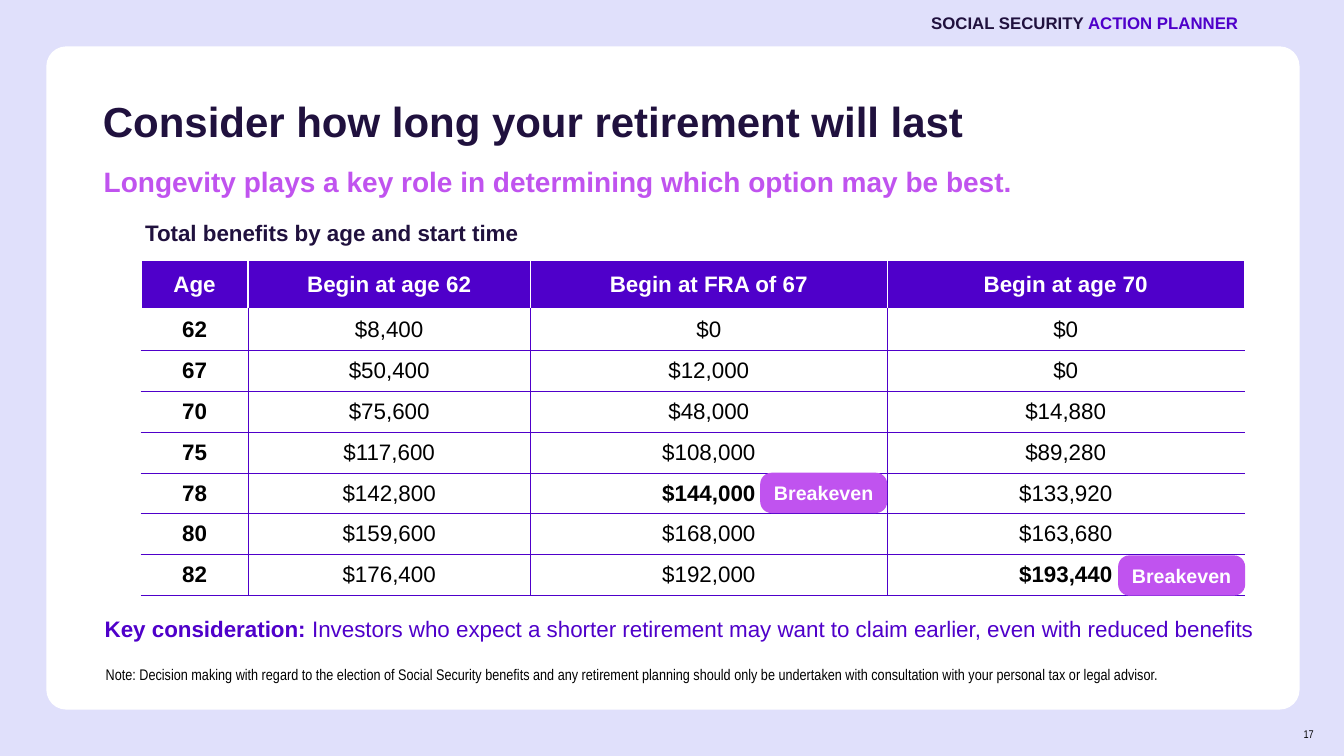
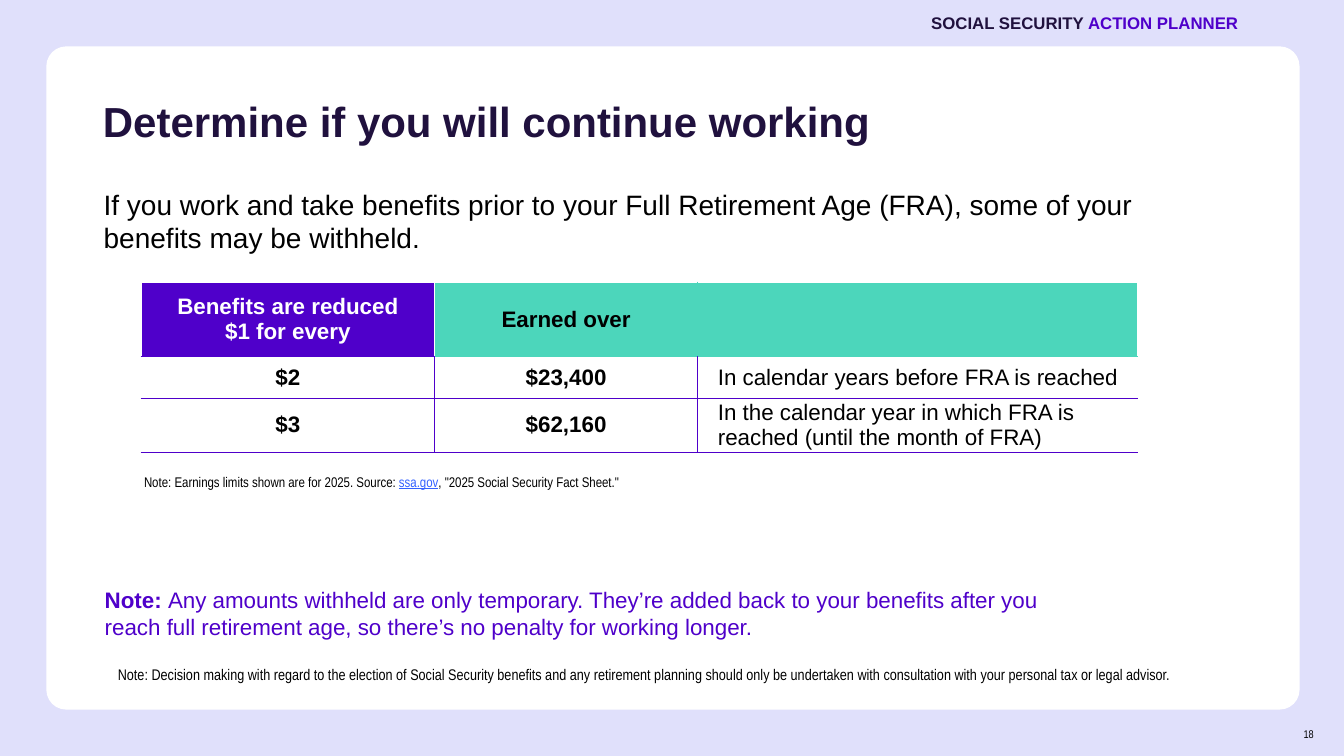
import pptx
import pptx.dml.color
import pptx.enum.shapes
import pptx.enum.text
import pptx.oxml
import pptx.oxml.ns
import pptx.util

Inches = pptx.util.Inches
Pt = pptx.util.Pt
RGBColor = pptx.dml.color.RGBColor
ALIGN = pptx.enum.text.PP_ALIGN
ANCHOR = pptx.enum.text.MSO_ANCHOR
ROUNDED = pptx.enum.shapes.MSO_SHAPE.ROUNDED_RECTANGLE

LAVENDER = RGBColor(0xE0, 0xE0, 0xFB)
WHITE = RGBColor(0xFF, 0xFF, 0xFF)
BLACK = RGBColor(0, 0, 0)
NAVY = RGBColor(0x20, 0x11, 0x3E)
PURPLE = RGBColor(0x4F, 0x00, 0xCA)
ORCHID = RGBColor(0xC0, 0x53, 0xEF)
TEAL = RGBColor(0x4C, 0xD6, 0xBB)
LINK_BLUE = RGBColor(0x34, 0x61, 0xFF)


def write(frame, runs, size, align=ALIGN.LEFT, anchor=ANCHOR.TOP, font="Arial"):
    """Fill a text frame or cell with (text, colour, font settings) runs; \\n breaks a line."""
    frame.word_wrap = True
    frame.vertical_anchor = anchor
    paragraph = frame.paragraphs[0]
    paragraph.alignment = align
    for text, colour, settings in runs:
        for number, line in enumerate(text.split("\n")):
            if number:
                paragraph.add_line_break()
            run = paragraph.add_run()
            run.text = line
            run.font.name = font
            run.font.size = Pt(size)
            run.font.color.rgb = colour
            for name, value in settings.items():
                setattr(run.font, name, value)
    return paragraph


def add_benefit_table(slide, box, widths, header_height, header, body, bold_columns, base_width):
    """Header entries are (text, fill, text colour, base line colour, right line colour)."""
    left, top, width, height = (Inches(value) for value in box)
    grid = slide.shapes.add_table(len(body) + 1, len(widths), left, top, width, height).table
    for column, column_width in zip(grid.columns, widths):
        column.width = Inches(column_width)
    body_height = Inches((box[3] - header_height) / len(body))
    for number, row in enumerate(grid.rows):
        row.height = body_height if number else Inches(header_height)

    last = len(widths) - 1
    for r, texts in enumerate([[entry[0] for entry in header]] + body):
        for c, text in enumerate(texts):
            cell = grid.cell(r, c)
            _, fill, text_colour, base_colour, right_colour = header[c]
            base = (base_colour, base_width)
            purple_line, white_line = (PURPLE, 0.5), (WHITE, 1)
            if r == 0:
                lines = {
                    "lnL": (header[c - 1][4] if c else WHITE, 1),
                    "lnR": (right_colour, 1),
                    "lnT": white_line,
                    "lnB": base,
                }
            else:
                fill, text_colour = WHITE, BLACK
                lines = {
                    "lnL": purple_line if c else white_line,
                    "lnR": purple_line if c < last else white_line,
                    "lnT": base if r == 1 else purple_line,
                    "lnB": purple_line,
                }
                cell.margin_top = cell.margin_bottom = 0
            cell.fill.solid()
            cell.fill.fore_color.rgb = fill
            for position, (tag, (colour, points)) in enumerate(lines.items()):
                line = pptx.oxml.parse_xml(
                    f'<a:{tag} {pptx.oxml.ns.nsdecls("a")} w="{Pt(points)}">'
                    f'<a:solidFill><a:srgbClr val="{colour}"/></a:solidFill></a:{tag}>'
                )
                cell._tc.get_or_add_tcPr().insert(position, line)
            sentence = r > 0 and not text.startswith("$") and c > 0
            if sentence:
                cell.margin_left = Inches(0.2)
            bold = r == 0 or c in bold_columns or text in BREAKEVEN_AMOUNTS
            cell.vertical_anchor = ANCHOR.MIDDLE
            if text:
                write(cell.text_frame, [(text, text_colour, {"bold": bold})], 16,
                      ALIGN.LEFT if sentence else ALIGN.CENTER)
                cell.vertical_anchor = ANCHOR.MIDDLE


BREAKEVEN_AMOUNTS = ("$144,000", "$193,440")
BOLD, REGULAR = {"bold": True}, {"bold": False}
ADVICE = (
    "Note: Decision making with regard to the election of Social Security benefits and any "
    "retirement planning should only be undertaken with consultation with your personal tax "
    "or legal advisor."
)

prs = pptx.Presentation()
prs.slide_width = Inches(13.33)
prs.slide_height = Inches(7.5)
background = prs.slide_master.background.fill
background.solid()
background.fore_color.rgb = LAVENDER
title_only = prs.slide_layouts[5]

# Title, page number, left edge of the advice note, and text blocks as
# (box, runs, size, anchor, font)
pages = [
    ("Consider how long your retirement will last", "17", 0.95, [
        ((0.93, 1.58, 10.29, 0.43),
         [("Longevity plays a key role in determining which option may be best.", ORCHID, BOLD)],
         20, ANCHOR.TOP, "Arial"),
        ((1.34, 2.13, 8.32, 0.43),
         [("Total benefits by age and start time", NAVY, BOLD)], 16, ANCHOR.TOP, "Arial"),
        ((0.94, 6.05, 11.71, 0.43),
         [("Key consideration: ", PURPLE, BOLD),
          ("Investors who expect a shorter retirement may want to claim earlier, "
           "even with reduced benefits", PURPLE, REGULAR)], 16, ANCHOR.TOP, "Arial"),
    ]),
    ("Determine if you will continue working", "18", 1.07, [
        ((0.93, 1.81, 10.84, 0.43),
         [("If you work and take benefits prior to your Full Retirement Age (FRA), "
           "some of your benefits may be withheld.", BLACK, REGULAR)], 20, ANCHOR.TOP, "Arial"),
        ((1.33, 4.27, 11.25, 0.64),
         [("Note: Earnings limits shown are for 2025. Source: ", BLACK, {}),
          ("ssa.gov", LINK_BLUE, {"underline": True}),
          (', "2025 Social Security Fact Sheet."', BLACK, {})],
         10, ANCHOR.BOTTOM, "Arial Narrow"),
        ((0.94, 5.76, 11.71, 0.64),
         [("Note: ", PURPLE, BOLD),
          ("Any amounts withheld are only temporary. They’re added back to your benefits "
           "after you\nreach full retirement age, so there’s no penalty for working longer.",
           PURPLE, REGULAR)], 16, ANCHOR.BOTTOM, "Arial"),
    ]),
]

slides = []
for title_text, page_number, advice_left, blocks in pages:
    slide = prs.slides.add_slide(title_only)
    slides.append(slide)

    panel = slide.shapes.add_shape(ROUNDED, Inches(0.46), Inches(0.46), Inches(12.43), Inches(6.58))
    panel.adjustments[0] = 0.03
    panel.shadow.inherit = False
    panel.fill.solid()
    panel.fill.fore_color.rgb = WHITE
    panel.line.fill.background()
    slide.shapes._spTree.insert(2, panel._element)

    title = slide.shapes.title
    title.left, title.top = Inches(0.92), Inches(0.68)
    title.width, title.height = Inches(11.88), Inches(1.09)
    title.text_frame.auto_size = pptx.enum.text.MSO_AUTO_SIZE.NONE
    heading = write(title.text_frame, [(title_text, NAVY, BOLD)], 30, anchor=ANCHOR.MIDDLE)
    heading.line_spacing = 0.9

    planner_band = slide.shapes.add_textbox(Inches(6.67), 0, Inches(5.71), Inches(0.45))
    write(planner_band.text_frame,
          [("SOCIAL SECURITY", NAVY, BOLD), (" ACTION PLANNER", PURPLE, BOLD)],
          12, ALIGN.RIGHT, ANCHOR.MIDDLE)
    page_box = slide.shapes.add_textbox(Inches(12.43), Inches(7.08), Inches(0.7), Inches(0.4))
    write(page_box.text_frame, [(page_number, BLACK, {})], 8, ALIGN.RIGHT, ANCHOR.MIDDLE,
          "Arial Narrow")

    advice = ((advice_left, 6.19, 11.25, 0.64), [(ADVICE, BLACK, {})],
              11, ANCHOR.BOTTOM, "Arial Narrow")
    for box, runs, size, anchor, font in blocks + [advice]:
        block = slide.shapes.add_textbox(*(Inches(value) for value in box))
        write(block.text_frame, runs, size, anchor=anchor, font=font)

longevity, working = slides

start_ages = ["Age", "Begin at age 62", "Begin at FRA of 67", "Begin at age 70"]
add_benefit_table(
    longevity, (1.4, 2.58, 10.94, 3.33), [1.06, 2.8, 3.54, 3.54], 0.49,
    [(text, PURPLE, WHITE, WHITE, WHITE) for text in start_ages],
    [
        ["62", "$8,400", "$0", "$0"],
        ["67", "$50,400", "$12,000", "$0"],
        ["70", "$75,600", "$48,000", "$14,880"],
        ["75", "$117,600", "$108,000", "$89,280"],
        ["78", "$142,800", "$144,000", "$133,920"],
        ["80", "$159,600", "$168,000", "$163,680"],
        ["82", "$176,400", "$192,000", "$193,440"],
    ],
    bold_columns=(0,), base_width=3,
)

for pill_left, pill_top in ((7.54, 4.69), (11.09, 5.51)):
    pill = longevity.shapes.add_shape(ROUNDED, Inches(pill_left), Inches(pill_top),
                                      Inches(1.26), Inches(0.4))
    pill.adjustments[0] = 0.28
    pill.shadow.inherit = False
    pill.fill.solid()
    pill.fill.fore_color.rgb = ORCHID
    pill.line.fill.background()
    pill.text_frame.margin_left = pill.text_frame.margin_right = 0
    write(pill.text_frame, [("Breakeven", WHITE, BOLD)], 14, ALIGN.CENTER, ANCHOR.MIDDLE)

add_benefit_table(
    working, (1.4, 2.8, 9.88, 1.56), [2.91, 2.61, 4.36], 0.74,
    [
        ("Benefits are reduced\n$1 for every", PURPLE, WHITE, PURPLE, WHITE),
        ("Earned over", TEAL, BLACK, TEAL, TEAL),
        ("", TEAL, BLACK, TEAL, WHITE),
    ],
    [
        ["$2", "$23,400", "In calendar years before FRA is reached"],
        ["$3", "$62,160", "In the calendar year in which FRA is reached (until the month of FRA)"],
    ],
    bold_columns=(0, 1), base_width=0.5,
)

prs.save("out.pptx")
